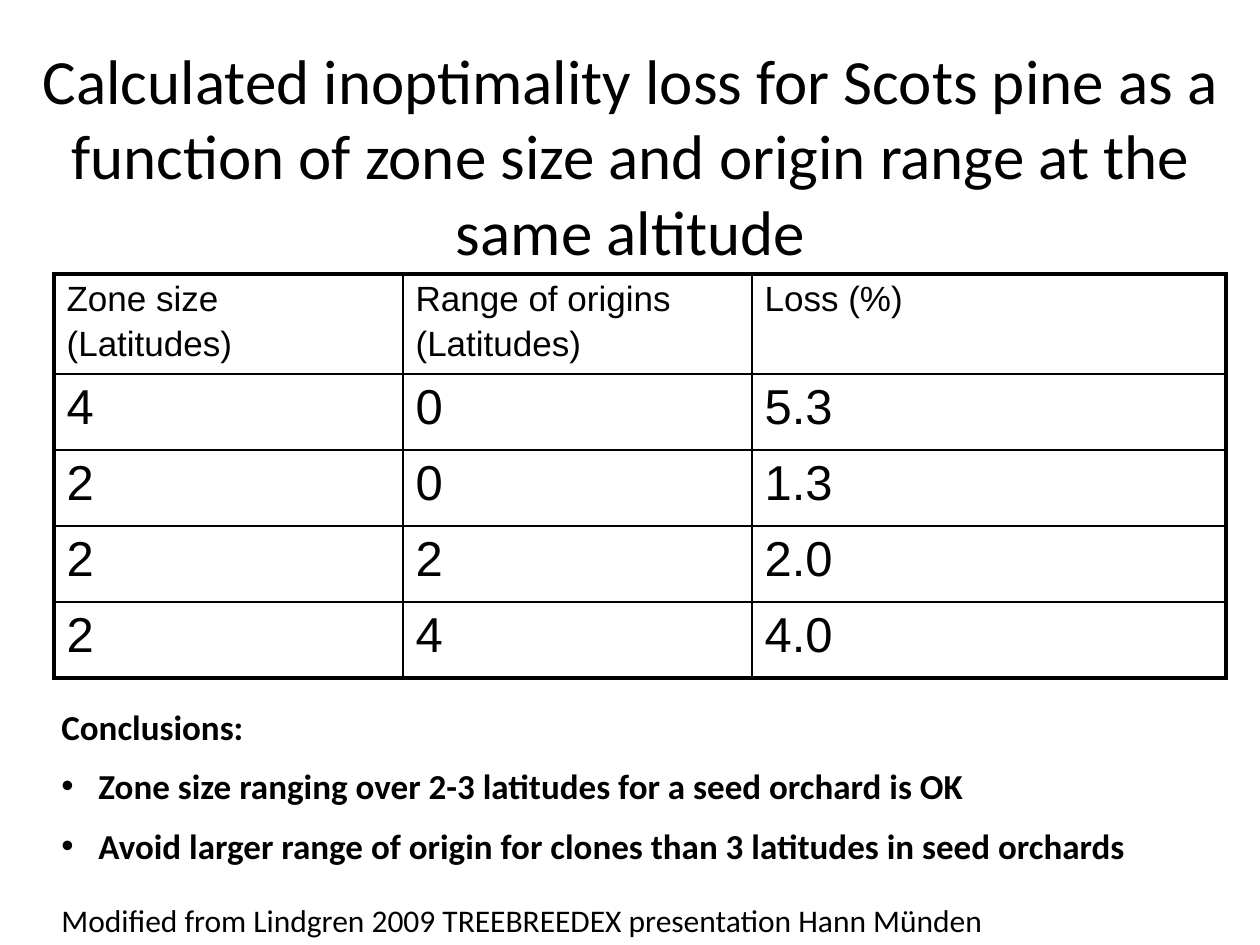
from lxml.etree import SubElement
from pptx import Presentation
from pptx.dml.color import RGBColor
from pptx.enum.text import MSO_ANCHOR, MSO_AUTO_SIZE, PP_ALIGN
from pptx.oxml import parse_xml
from pptx.oxml.ns import nsdecls, qn
from pptx.util import Emu, Pt

PX = 914400 / 126  # EMU in one px
THEME = {
    "ink": "000000", "paper": "FFFFFF",
    "heading": {"name": "Calibri", "size": Pt(36), "bold": False},
    "table_head": {"name": "Arial", "size": Pt(20), "bold": False},
    "table_value": {"name": "Arial", "size": Pt(28), "bold": False},
    "conclusion": {"name": "Calibri", "size": Pt(20), "bold": True},
    "credit": {"name": "Calibri", "size": Pt(18), "bold": False},
}


def px(*lengths):
    return [Emu(round(length * PX)) for length in lengths]


def write(frame, lines, style, space=0, align=PP_ALIGN.LEFT):
    frame.word_wrap = True
    for index, line in enumerate(lines):
        para = frame.paragraphs[0] if index == 0 else frame.add_paragraph()
        para.alignment = align
        para.space_before = Pt(space)
        span = para.add_run()
        span.text = line
        for name, value in THEME[style].items():
            setattr(span.font, name, value)
        span.font.color.rgb = RGBColor.from_string(THEME["ink"])


deck = Presentation()
deck.slide_width, deck.slide_height = px(1260, 945)
page = deck.slides.add_slide(deck.slide_layouts[5])
page.background.fill.solid()
page.background.fill.fore_color.rgb = RGBColor.from_string(THEME["paper"])

# Title
title = page.shapes.title
title.left, title.top, title.width, title.height = px(25, 76, 1211, 157)
title.text_frame.auto_size = MSO_AUTO_SIZE.NONE
title.text_frame.vertical_anchor = MSO_ANCHOR.MIDDLE
write(title.text_frame, [
    "Calculated inoptimality loss for Scots pine as a function of zone size "
    "and origin range at the same altitude"], "heading", align=PP_ALIGN.CENTER)

# Loss table: heavy outer frame, thin inner rules
rows = [
    (["Zone size", "(Latitudes)"], ["Range of origins", "(Latitudes)"], ["Loss (%)"]),
    (["4"], ["0"], ["5.3"]),
    (["2"], ["0"], ["1.3"]),
    (["2"], ["2"], ["2.0"]),
    (["2"], ["4"], ["4.0"]),
]
column_widths = px(349, 349, 474)
row_heights = px(100, 76, 76, 76, 76)
table = page.shapes.add_table(len(rows), len(column_widths), *px(54, 274, 1172, 404)).table
table.first_row = table.horz_banding = False
for column, width in zip(table.columns, column_widths):
    column.width = width
for row, height in zip(table.rows, row_heights):
    row.height = height

for r, values in enumerate(rows):
    for c, lines in enumerate(values):
        cell = table.cell(r, c)
        cell.fill.background()
        write(cell.text_frame, lines, "table_value" if r else "table_head", space=3)
        on_frame = {"L": c == 0, "R": c == len(values) - 1,
                    "T": r == 0, "B": r == len(rows) - 1}
        for index, (side, heavy) in enumerate(on_frame.items()):
            border = parse_xml(
                f'<a:ln{side} {nsdecls("a")} w="{Pt(2.25 if heavy else 1)}"><a:solidFill>'
                f'<a:srgbClr val="{THEME["ink"]}"/></a:solidFill></a:ln{side}>')
            cell._tc.get_or_add_tcPr().insert(index, border)

# Conclusions, the last two bulleted
conclusions = page.shapes.add_textbox(*px(49, 699, 1171, 190)).text_frame
write(conclusions, [
    "Conclusions:",
    "Zone size ranging over 2-3 latitudes for a seed orchard is OK",
    "Avoid larger range of origin for clones than 3 latitudes in seed orchards",
], "conclusion", space=10)
[hang] = px(37)
for para in conclusions.paragraphs[1:]:
    properties = para._p.get_or_add_pPr()
    properties.set("marL", str(hang))
    properties.set("indent", str(-hang))
    SubElement(properties, qn("a:buFont"), typeface="Arial")
    SubElement(properties, qn("a:buChar"), char="•")

# Credit
credit = page.shapes.add_textbox(*px(49, 895, 994, 50)).text_frame
write(credit, ["Modified from Lindgren 2009 TREEBREEDEX presentation Hann Münden"], "credit")

deck.save("out.pptx")
